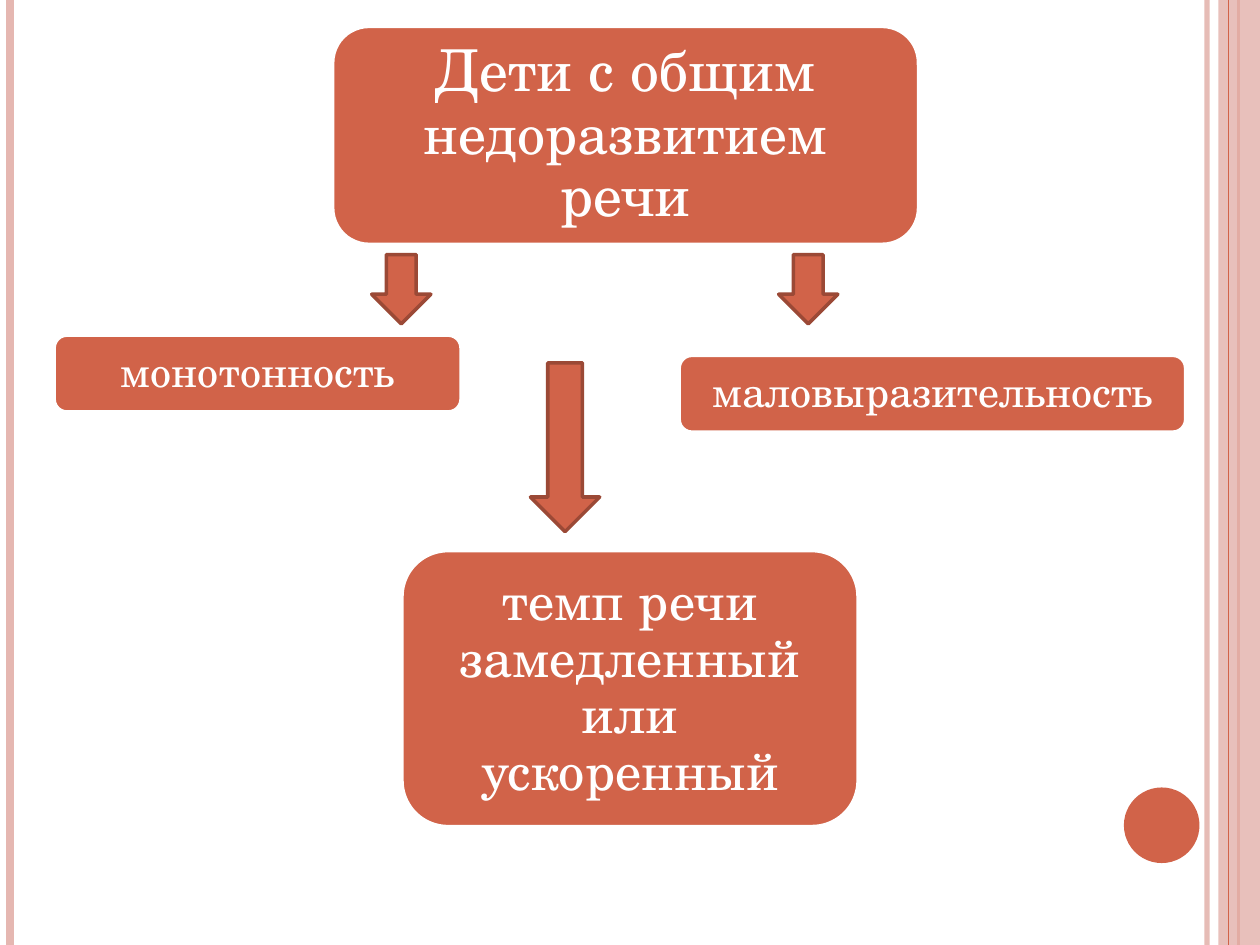
"""Build a slide on the speech features of children with general speech underdevelopment."""
from dataclasses import dataclass
from typing import Optional

from lxml.etree import SubElement
from pptx import Presentation
from pptx.dml.color import RGBColor
from pptx.enum.shapes import MSO_CONNECTOR, MSO_SHAPE
from pptx.enum.text import MSO_ANCHOR, MSO_AUTO_SIZE, PP_ALIGN
from pptx.oxml.ns import qn
from pptx.util import Inches, Pt

FONT = "TeX Gyre Schola"
WHITE = RGBColor(0xFF, 0xFF, 0xFF)
PINK = RGBColor(0xE5, 0xB7, 0xB1)
TERRACOTTA = RGBColor(0xD1, 0x63, 0x49)
DARK_TERRACOTTA = RGBColor(0x9B, 0x49, 0x36)


@dataclass
class Bounds:
    left: float
    top: float
    width: float
    height: float

    def lengths(self) -> tuple:
        return tuple(Inches(value) for value in (self.left, self.top, self.width, self.height))


@dataclass
class Stripe:
    x: float
    color: RGBColor
    width: float
    opacity: int = 100


@dataclass
class Box:
    bounds: Bounds
    text: str
    size: float
    inset: float


TITLE_BOUNDS = Bounds(2.64, 0.21, 4.65, 1.73)
TITLE_RUNS = [("Дети с общим ", 33), ("недоразвитием", 32), (" речи", 33)]
OUTER_STRIPES = [
    Stripe(9.58, PINK, 3, 93),
    Stripe(0.08, PINK, 4.5),
    Stripe(9.83, TERRACOTTA, 1.5),
]
INNER_STRIPE = Stripe(9.75, TERRACOTTA, 0.75)
BOXES = [
    Box(Bounds(0.43, 2.66, 3.23, 0.61), "монотонность", 24, 0.1),
    Box(Bounds(5.39, 2.82, 4.02, 0.61), "маловыразительность", 24, 0.1),
    Box(Bounds(3.19, 4.37, 3.62, 2.19), "темп речи замедленный или ускоренный", 30, 0.12),
]
ARROWS = [
    Bounds(2.95, 2.02, 0.47, 0.55),
    Bounds(6.18, 2.02, 0.47, 0.55),
    Bounds(4.21, 2.88, 0.55, 1.34),
]


def set_opacity(element, percent: int) -> None:
    color = next(element.iter(qn("a:srgbClr")))
    SubElement(color, qn("a:alpha")).set("val", str(percent * 1000))


def add_stripe(slide, stripe: Stripe) -> None:
    x = Inches(stripe.x)
    connector = slide.shapes.add_connector(MSO_CONNECTOR.STRAIGHT, x, 0, x, Inches(7.5))
    connector.line.color.rgb = stripe.color
    connector.line.width = Pt(stripe.width)
    properties = connector.element.spPr
    if stripe.opacity < 100:
        set_opacity(properties, stripe.opacity)
    SubElement(properties, qn("a:effectLst"))


def add_filled_shape(slide, kind: MSO_SHAPE, bounds: Bounds, fill: RGBColor = TERRACOTTA,
                     line: Optional[RGBColor] = None):
    shape = slide.shapes.add_shape(kind, *bounds.lengths())
    shape.shadow.inherit = False
    shape.fill.solid()
    shape.fill.fore_color.rgb = fill
    if line is None:
        shape.line.fill.background()
    else:
        shape.line.color.rgb = line
        shape.line.width = Pt(2)
    return shape


def format_text(shape, inset: float, sizes: list[float]) -> None:
    frame = shape.text_frame
    frame.word_wrap = True
    frame.auto_size = MSO_AUTO_SIZE.NONE
    frame.vertical_anchor = MSO_ANCHOR.MIDDLE
    frame.margin_left = frame.margin_right = Inches(inset)
    frame.margin_top = frame.margin_bottom = Inches(inset)
    paragraph = frame.paragraphs[0]
    paragraph.alignment = PP_ALIGN.CENTER
    paragraph.line_spacing = 0.9
    paragraph.space_before = Pt(0)
    for run, size in zip(paragraph.runs, sizes):
        run.font.name = FONT
        run.font.size = Pt(size)
        run.font.color.rgb = WHITE


def add_background(slide) -> None:
    for stripe in OUTER_STRIPES:
        add_stripe(slide, stripe)
    band = add_filled_shape(slide, MSO_SHAPE.RECTANGLE, Bounds(9.67, 0, 0.33, 7.5), PINK)
    set_opacity(band.element.spPr, 87)
    add_stripe(slide, INNER_STRIPE)
    add_filled_shape(slide, MSO_SHAPE.OVAL, Bounds(8.92, 6.25, 0.6, 0.6))


def add_title(slide) -> None:
    add_filled_shape(slide, MSO_SHAPE.ROUNDED_RECTANGLE, TITLE_BOUNDS, line=WHITE)
    title = slide.shapes.title
    title.left, title.top, title.width, title.height = TITLE_BOUNDS.lengths()
    for text, _ in TITLE_RUNS:
        title.text_frame.paragraphs[0].add_run().text = text
    format_text(title, 0.14, [size for _, size in TITLE_RUNS])
    title.element.getparent().append(title.element)


def add_box(slide, box: Box) -> None:
    shape = add_filled_shape(slide, MSO_SHAPE.ROUNDED_RECTANGLE, box.bounds, line=WHITE)
    shape.text_frame.text = box.text
    format_text(shape, box.inset, [box.size])


def main() -> None:
    presentation = Presentation()
    presentation.slide_width = Inches(10)
    presentation.slide_height = Inches(7.5)
    slide = presentation.slides.add_slide(presentation.slide_layouts.get_by_name("Title Only"))
    add_background(slide)
    add_title(slide)
    for box in BOXES:
        add_box(slide, box)
    for bounds in ARROWS:
        add_filled_shape(slide, MSO_SHAPE.DOWN_ARROW, bounds, line=DARK_TERRACOTTA)
    presentation.save("out.pptx")


if __name__ == "__main__":
    main()
